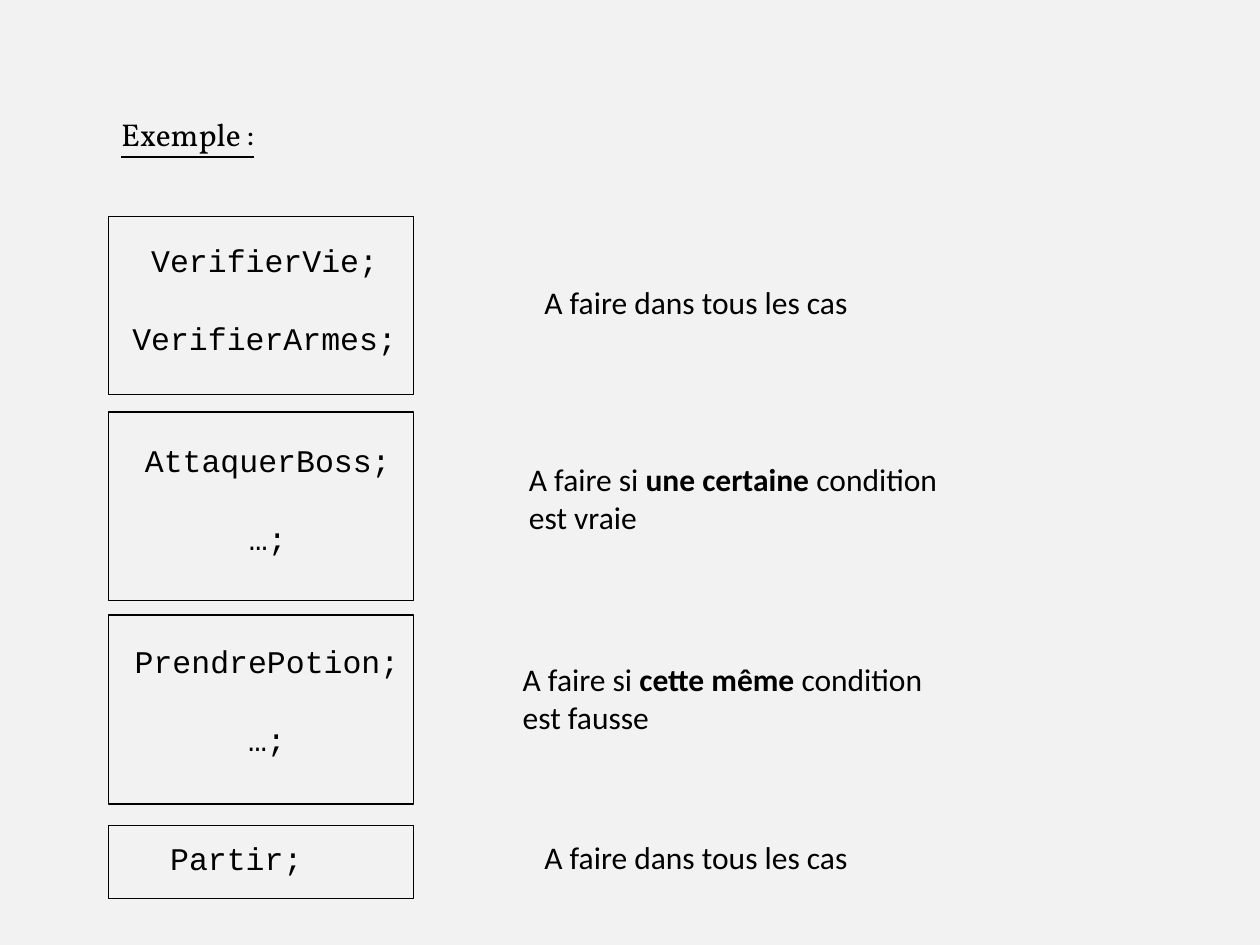
from dataclasses import dataclass

from pptx import Presentation
from pptx.dml import color
from pptx.enum import shapes, text
from pptx.util import Pt


@dataclass(frozen=True)
class Theme:
    ink: color.RGBColor = color.RGBColor(0, 0, 0)
    paper: color.RGBColor = color.RGBColor(0xF2, 0xF2, 0xF2)
    head: str = "Vollkorn"
    body: str = "Calibri"
    code: str = "Courier New"
    size: float = 18
    line: float = 0.75
    gap: float = 23


class Page:
    """Draws the elements of one slide in one theme."""

    def __init__(self, slide, theme):
        self.slide, self.theme = slide, theme
        fill = slide.background.fill
        fill.solid()
        fill.fore_color.rgb = theme.paper

    def run(self, par, words, face, bold=False, under=False):
        run = par.add_run()
        run.text = words
        font = run.font
        font.name, font.size = face, Pt(self.theme.size)
        font.bold, font.underline = bold, under
        font.color.rgb = self.theme.ink

    def title(self, words, left, top, width, height):
        head = self.slide.shapes.title
        head.left, head.top = Pt(left), Pt(top)
        head.width, head.height = Pt(width), Pt(height)
        frame = head.text_frame
        frame.vertical_anchor = text.MSO_ANCHOR.TOP
        frame.auto_size = text.MSO_AUTO_SIZE.NONE
        par = frame.paragraphs[0]
        par.alignment = text.PP_ALIGN.LEFT
        self.run(par, words, self.theme.head, under=True)

    def box(self, left, top, width, height):
        rect = self.slide.shapes.add_shape(
            shapes.MSO_SHAPE.RECTANGLE, Pt(left), Pt(top), Pt(width), Pt(height))
        rect.shadow.inherit = False
        rect.fill.background()
        rect.line.color.rgb = self.theme.ink
        rect.line.width = Pt(self.theme.line)

    def lines(self, rows, face, align, gap, left, top, width, height):
        area = self.slide.shapes.add_textbox(Pt(left), Pt(top), Pt(width), Pt(height))
        frame = area.text_frame
        frame.word_wrap = False
        frame.auto_size = text.MSO_AUTO_SIZE.SHAPE_TO_FIT_TEXT
        for i, row in enumerate(rows):
            par = frame.add_paragraph() if i else frame.paragraphs[0]
            par.alignment = align
            par.space_before = Pt(gap if i else 0)
            for words, bold in row:
                self.run(par, words, face, bold)

    def code(self, rows, *area):
        plain = [[(words, False)] for words in rows]
        self.lines(plain, self.theme.code, text.PP_ALIGN.CENTER, self.theme.gap, *area)

    def note(self, rows, *area):
        self.lines(rows, self.theme.body, text.PP_ALIGN.LEFT, 0, *area)


def test(which, end):
    return [[("A faire si ", False), (which, True), (" condition", False)],
            [(end, False)]]


def main():
    deck = Presentation()
    deck.slide_width, deck.slide_height = Pt(720), Pt(540)
    page = Page(deck.slides.add_slide(deck.slide_layouts[5]), Theme())
    page.title("Exemple :", 62, 62, 260, 29)

    always = [[("A faire dans tous les cas", False)]]
    steps = [
        ((123.6, 102), ["VerifierVie;", "VerifierArmes;"], (68.4, 134, 165.6, 72),
         always, (304, 158.4, 190, 29)),
        ((235.4, 108), ["AttaquerBoss;", "…;"], (75.6, 248.4, 154.8, 72),
         test("une certaine", "est vraie"), (295.2, 259.2, 277, 50.4)),
        ((351.4, 108), ["PrendrePotion;", "…;"], (69.8, 363.6, 165.6, 72),
         test("cette même", "est fausse"), (291.6, 373.7, 273, 50.4)),
        ((471.6, 42), ["Partir;"], (90, 476, 90, 29),
         always, (304, 475.2, 190, 29)),
    ]
    for (top, height), calls, spot, words, side in steps:
        page.box(62, top, 174.2, height)
        page.code(calls, *spot)
        page.note(words, *side)
    deck.save("out.pptx")


if __name__ == "__main__":
    main()
